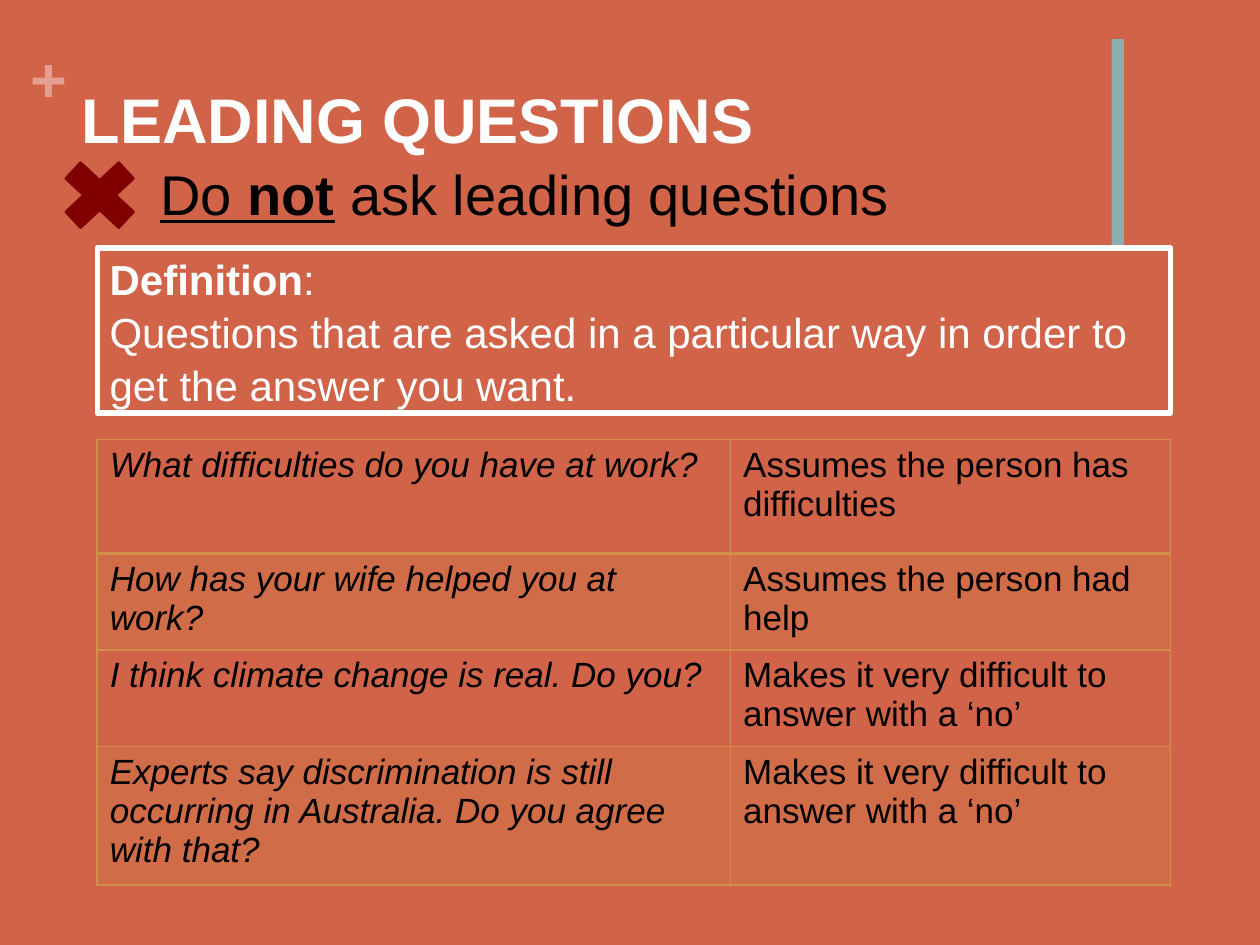
from collections import namedtuple
from dataclasses import dataclass

import lxml.etree
import pptx
import pptx.dml.color
import pptx.enum.shapes
import pptx.enum.text
import pptx.oxml
import pptx.oxml.ns
import pptx.util

Cm = pptx.util.Cm
Pt = pptx.util.Pt
SHAPES = pptx.enum.shapes.MSO_SHAPE
ANCHOR = pptx.enum.text.MSO_ANCHOR
Box = namedtuple("Box", "left top width height")


@dataclass(frozen=True)
class Theme:
    font: str = "Arial"
    background: str = "D16349"
    light: str = "FFFFFF"
    dark: str = "000000"
    plus: str = "E3A091"
    bar: str = "8CADAE"
    cross: str = "800000"
    grid: str = "D19049"
    band_alpha: int = 20
    title_size: int = 36
    tip_size: int = 32
    definition_size: int = 24
    table_size: int = 20
    loose: float = 1.1
    medium: float = 1.05


THEME = Theme()


def rgb(value):
    return pptx.dml.color.RGBColor.from_string(value)


def inside(box, left, top, width, height):
    return Box(box.left + left, box.top + top, width, height)


def lengths(box):
    return [Cm(value) for value in box]


def write(frame, paragraphs, size, color, spacing=None, indent=0,
          anchor=ANCHOR.TOP, margins=(0.25, 0.13), **style):
    frame.word_wrap = True
    frame.vertical_anchor = anchor
    frame.margin_left = frame.margin_right = Cm(margins[0])
    frame.margin_top = frame.margin_bottom = Cm(margins[1])
    for index, runs in enumerate(paragraphs):
        paragraph = frame.add_paragraph() if index else frame.paragraphs[0]
        paragraph.alignment = pptx.enum.text.PP_ALIGN.LEFT
        paragraph.line_spacing = spacing
        if indent:
            paragraph._p.get_or_add_pPr().set("marL", str(Cm(indent)))
        for text, run_style in runs:
            run = paragraph.add_run()
            run.text = text
            run.font.name = THEME.font
            run.font.size = Pt(size)
            run.font.color.rgb = rgb(color)
            for key, value in {**style, **run_style}.items():
                setattr(run.font, key, value)


def add_text(slide, box, paragraphs, **style):
    write(slide.shapes.add_textbox(*lengths(box)).text_frame, paragraphs, **style)


def add_block(slide, preset, box, fill, line=None, weight=1):
    block = slide.shapes.add_shape(preset, *lengths(box))
    block.shadow.inherit = False
    block.fill.solid()
    block.fill.fore_color.rgb = rgb(fill)
    if line:
        block.line.color.rgb = rgb(line)
        block.line.width = Pt(weight)
    else:
        block.line.fill.background()
    return block


def add_header(slide, box):
    add_text(slide, inside(box, 0, 0, 0.74, 1.55), [[("+", {})]],
             size=THEME.title_size, color=THEME.plus, bold=True,
             spacing=THEME.loose, margins=(0, 0))
    add_block(slide, SHAPES.RECTANGLE,
              inside(box, box.width - 0.25, 0.15, 0.25, 4.45), THEME.bar)
    add_text(slide, inside(box, 0.79, 0.71, 20.98, 3.1),
             [[("LEADING QUESTIONS", {})]], size=THEME.title_size,
             color=THEME.light, bold=True, spacing=THEME.loose)


def add_tip(slide, box):
    add_text(slide, inside(box, 0.43, 0, box.width - 0.43, box.height),
             [[("Do ", {"underline": True}),
               ("not", {"underline": True, "bold": True}),
               (" ask leading questions", {})]],
             size=THEME.tip_size, color=THEME.dark,
             spacing=THEME.loose, indent=1.58)
    add_block(slide, SHAPES.MATH_MULTIPLY, inside(box, 0, 0.02, 2.08, 1.93),
              THEME.cross, THEME.cross)


def add_definition(slide, box):
    panel = add_block(slide, SHAPES.RECTANGLE, box, THEME.background,
                      THEME.light, 3)
    meaning = ("Questions that are asked in a particular way in order to "
               "get the answer you want.")
    write(panel.text_frame,
          [[("Definition", {"bold": True}), (":", {})], [(meaning, {})]],
          size=THEME.definition_size, color=THEME.light,
          spacing=THEME.medium, anchor=ANCHOR.MIDDLE)


def set_borders(cell, widths):
    properties = cell._tc.get_or_add_tcPr()
    for position, (side, width) in enumerate(widths.items()):
        border = pptx.oxml.parse_xml(
            f'<a:{side} {pptx.oxml.ns.nsdecls("a")} w="{Pt(width)}"><a:solidFill>'
            f'<a:srgbClr val="{THEME.grid}"/></a:solidFill></a:{side}>')
        properties.insert(position, border)


def fill_band(cell):
    cell.fill.solid()
    cell.fill.fore_color.rgb = rgb(THEME.grid)
    color = cell._tc.tcPr.find(".//" + pptx.oxml.ns.qn("a:srgbClr"))
    alpha = lxml.etree.SubElement(color, pptx.oxml.ns.qn("a:alpha"))
    alpha.set("val", str(THEME.band_alpha * 1000))


def add_examples(slide, box, examples, row_heights, question_share):
    table = slide.shapes.add_table(len(examples), 2, *lengths(box)).table
    table.first_row = table.horz_banding = False
    question_width = box.width * question_share
    table.columns[0].width = Cm(question_width)
    table.columns[1].width = Cm(box.width - question_width)
    for row, (texts, height) in enumerate(zip(examples, row_heights)):
        table.rows[row].height = Cm(height)
        for column, text in enumerate(texts):
            cell = table.cell(row, column)
            write(cell.text_frame, [[(text, {})]], size=THEME.table_size,
                  color=THEME.dark, italic=column == 0)
            if row % 2:
                fill_band(cell)
            else:
                cell.fill.background()
            set_borders(cell, {"lnL": 1, "lnR": 1, "lnT": 2 if row == 1 else 1,
                               "lnB": 2 if row == 0 else 1})


def main():
    deck = pptx.Presentation()
    deck.slide_width, deck.slide_height = Cm(25.4), Cm(19.05)
    slide = deck.slides.add_slide(deck.slide_layouts[6])
    slide.background.fill.solid()
    slide.background.fill.fore_color.rgb = rgb(THEME.background)

    examples = [
        ("What difficulties do you have at work?",
         "Assumes the person has difficulties"),
        ("How has your wife helped you at work?",
         "Assumes the person had help"),
        ("I think climate change is real. Do you?",
         "Makes it very difficult to answer with a ‘no’"),
        ("Experts say discrimination is still occurring in Australia. "
         "Do you agree with that?",
         "Makes it very difficult to answer with a ‘no’"),
    ]
    row_heights = [2.29, 1.83, 1.83, 2.62]

    add_header(slide, Box(0.61, 0.64, 22.05, 4.6))
    add_tip(slide, Box(0.97, 2.95, 21.41, 3))
    add_definition(slide, Box(1.96, 5, 21.64, 3.33))
    add_examples(slide, Box(1.96, 8.86, 21.64, sum(row_heights)),
                 examples, row_heights, question_share=0.59)
    deck.save("out.pptx")


if __name__ == "__main__":
    main()
